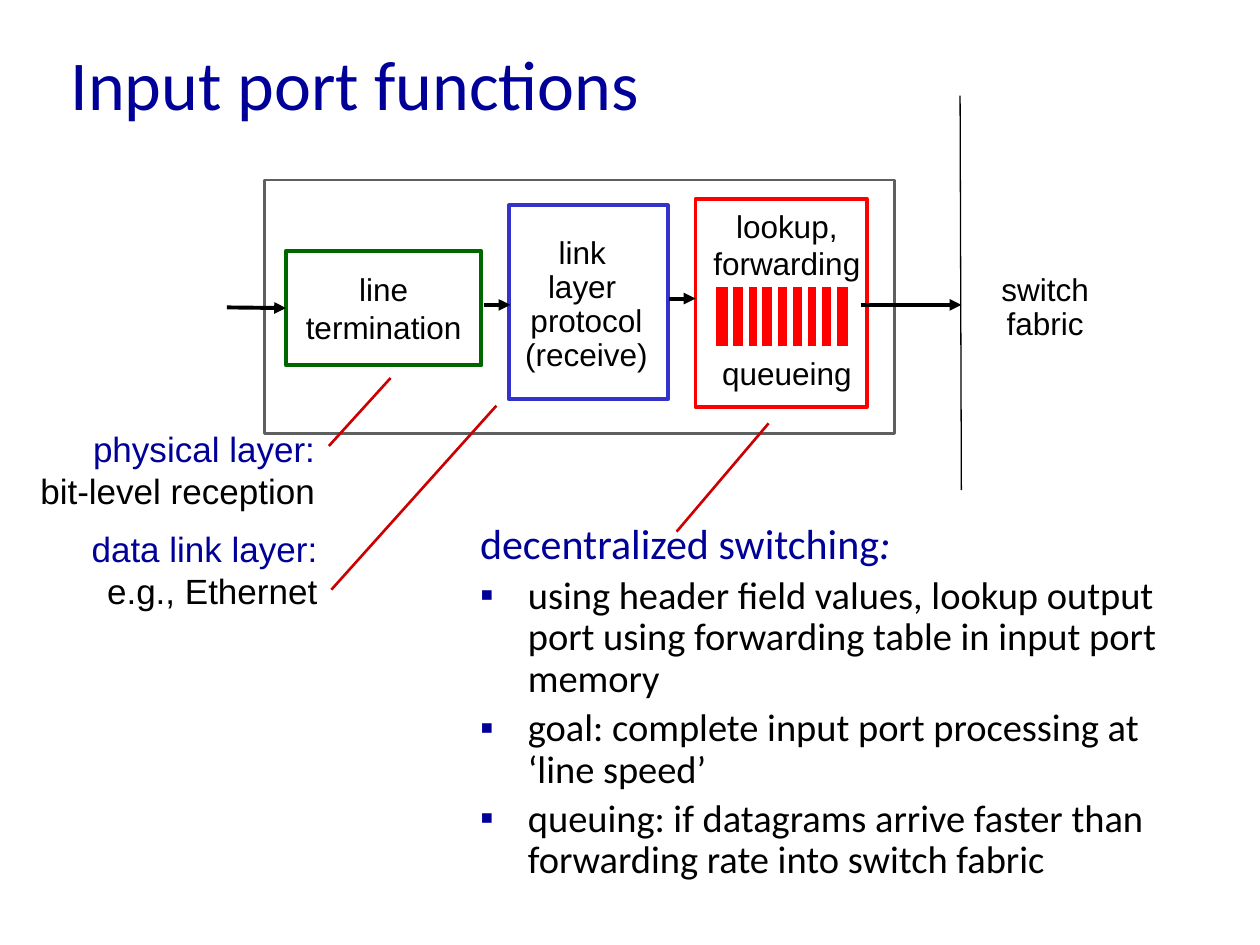
from dataclasses import dataclass
from typing import Optional

from lxml import etree
from pptx import Presentation
from pptx.dml.color import RGBColor
from pptx.enum.shapes import MSO_CONNECTOR, MSO_SHAPE
from pptx.enum.text import MSO_ANCHOR, MSO_AUTO_SIZE, PP_ALIGN
from pptx.oxml.ns import qn
from pptx.util import Emu, Pt

EMU_PER_PX = 9144
RECTANGLE = MSO_SHAPE.RECTANGLE
STRAIGHT = MSO_CONNECTOR.STRAIGHT
MIDDLE = MSO_ANCHOR.MIDDLE
NO_AUTOFIT = MSO_AUTO_SIZE.NONE
LEFT, CENTER, RIGHT = PP_ALIGN.LEFT, PP_ALIGN.CENTER, PP_ALIGN.RIGHT

BLACK = RGBColor(0x00, 0x00, 0x00)
WHITE = RGBColor(0xFF, 0xFF, 0xFF)
GRAY = RGBColor(0x5F, 0x5F, 0x5F)
NAVY = RGBColor(0x00, 0x00, 0x99)
BLUE = RGBColor(0x33, 0x33, 0xCC)
GREEN = RGBColor(0x00, 0x66, 0x00)
RED = RGBColor(0xFF, 0x00, 0x00)
DARK_RED = RGBColor(0xCC, 0x00, 0x00)


def px(value: int) -> Emu:
    return Emu(value * EMU_PER_PX)


@dataclass(frozen=True)
class TextLine:
    text: str
    size: int = 18
    color: RGBColor = BLACK
    font: str = "Arial"
    align: PP_ALIGN = CENTER
    spacing: Optional[float] = None
    before: Optional[int] = None


@dataclass(frozen=True)
class Box:
    left: int
    top: int
    width: int
    height: int
    outline: Optional[RGBColor] = None
    weight: float = 2.25
    lines: tuple[TextLine, ...] = ()
    fill: RGBColor = WHITE


@dataclass(frozen=True)
class Line:
    start: tuple[int, int]
    end: tuple[int, int]
    color: RGBColor = BLACK
    weight: float = 2.25
    arrow: bool = False


FRAME = Box(210, 143, 500, 201, GRAY, 1.5)
LINE_TERMINATION = Box(227, 199, 155, 91, GREEN,
                       lines=(TextLine("line"), TextLine("termination")))
LINK_LAYER = Box(404, 163, 126, 154, BLUE)
LOOKUP = Box(552, 158, 136, 165, RED)
LINK_LABEL = Box(408, 197, 115, 91, lines=tuple(
    TextLine(text, spacing=0.9) for text in ("link ", "layer ", "protocol", "(receive)")))
FABRIC_LABEL = Box(772, 199, 115, 91, lines=tuple(
    TextLine(text, spacing=0.9) for text in ("switch", "fabric")))
QUEUE = Box(566, 226, 109, 51, WHITE, 3, fill=RED)
SEPARATOR_COUNT = 8
FIRST_SEPARATOR, LAST_SEPARATOR = 580, 662

LABELS = (
    Box(556, 159, 137, 160, lines=(
        TextLine("lookup,"), TextLine("forwarding"), TextLine("queueing", before=41))),
    Box(22, 334, 238, 77, lines=(
        TextLine("physical layer:", 20, NAVY, align=RIGHT),
        TextLine("bit-level reception", 20, align=RIGHT))),
    Box(61, 414, 201, 77, lines=(
        TextLine("data link layer:", 20, NAVY, align=RIGHT),
        TextLine("e.g., Ethernet", 20, align=RIGHT))),
)
INPUT_ARROW = Line((180, 244), (227, 244), arrow=True)
ARROWS = (
    Line((384, 242), (405, 242), arrow=True),
    Line((531, 237), (552, 237), arrow=True),
    Line((683, 242), (763, 242), arrow=True),
)
FABRIC_EDGE = Line((762, 76), (763, 389), weight=0.75)
CALLOUTS = (
    Line((261, 354), (310, 300), DARK_RED, 1.5),
    Line((263, 468), (394, 322), DARK_RED, 1.5),
    Line((537, 422), (610, 336), DARK_RED, 1.5),
)
BULLETS = (
    "using header field values, lookup output port using forwarding table in input port memory",
    "goal: complete input port processing at ‘line speed’",
    "queuing: if datagrams arrive faster than forwarding rate into switch fabric",
)


def place(shape, left: int, top: int, width: int, height: int) -> None:
    shape.left, shape.top = px(left), px(top)
    shape.width, shape.height = px(width), px(height)


def set_bullet(paragraph, color: Optional[RGBColor]) -> None:
    properties = paragraph._p.get_or_add_pPr()
    properties.set("marL", str(px(38)))
    properties.set("indent", str(-px(38)))
    if color is None:
        etree.SubElement(properties, qn("a:buNone"))
        return
    bullet_color = etree.SubElement(properties, qn("a:buClr"))
    etree.SubElement(bullet_color, qn("a:srgbClr"), val=str(color))
    etree.SubElement(properties, qn("a:buFont"), typeface="Arial")
    etree.SubElement(properties, qn("a:buChar"), char="▪")


def format_paragraph(paragraph, line: TextLine) -> None:
    paragraph.text = line.text
    paragraph.alignment = line.align
    if line.spacing is not None:
        paragraph.line_spacing = line.spacing
    if line.before is not None:
        paragraph.space_before = Pt(line.before)
    font = paragraph.font
    font.name, font.size = line.font, Pt(line.size)
    font.color.rgb = line.color


def write_lines(frame, lines: tuple[TextLine, ...]) -> None:
    for index, line in enumerate(lines):
        paragraph = frame.add_paragraph() if index else frame.paragraphs[0]
        format_paragraph(paragraph, line)


def draw_box(shapes, box: Box):
    shape = shapes.add_shape(RECTANGLE, px(box.left), px(box.top), px(box.width), px(box.height))
    shape.shadow.inherit = False
    shape.fill.solid()
    shape.fill.fore_color.rgb = box.fill
    if box.outline is None:
        shape.line.fill.background()
    else:
        shape.line.color.rgb = box.outline
        shape.line.width = Pt(box.weight)
    if box.lines:
        shape.text_frame.word_wrap = False
        shape.text_frame.vertical_anchor = MIDDLE
        write_lines(shape.text_frame, box.lines)
    return shape


def draw_label(shapes, box: Box) -> None:
    label = shapes.add_textbox(px(box.left), px(box.top), px(box.width), px(box.height))
    label.text_frame.word_wrap = False
    write_lines(label.text_frame, box.lines)


def draw_line(shapes, line: Line):
    connector = shapes.add_connector(STRAIGHT, *map(px, line.start + line.end))
    connector.line.color.rgb = line.color
    connector.line.width = Pt(line.weight)
    if line.arrow:
        etree.SubElement(connector.line._get_or_add_ln(), qn("a:tailEnd"), type="triangle")
    etree.SubElement(connector._element.spPr, qn("a:effectLst"))
    return connector


def draw_queue(shapes) -> None:
    group = shapes.add_group_shape()
    draw_box(group.shapes, QUEUE)
    step = (LAST_SEPARATOR - FIRST_SEPARATOR) / (SEPARATOR_COUNT - 1)
    for index in range(SEPARATOR_COUNT):
        x = round(FIRST_SEPARATOR + index * step)
        draw_line(group.shapes, Line((x, QUEUE.top), (x, QUEUE.top + 50), WHITE, 3))


def fill_title(title) -> None:
    place(title, 46, 32, 850, 67)
    title.text_frame.auto_size = NO_AUTOFIT
    title.text_frame.vertical_anchor = MIDDLE
    write_lines(title.text_frame, (TextLine("Input port functions", 40, NAVY, "Calibri", LEFT),))


def fill_body(body) -> None:
    place(body, 371, 410, 597, 292)
    frame = body.text_frame
    frame.auto_size = NO_AUTOFIT
    heading = frame.paragraphs[0]
    set_bullet(heading, None)
    format_paragraph(heading, TextLine("decentralized switching", 24, NAVY, "Calibri", LEFT, 0.9))
    colon = heading.add_run()
    colon.text = ":"
    colon.font.italic = True
    for text in BULLETS:
        paragraph = frame.add_paragraph()
        set_bullet(paragraph, NAVY)
        format_paragraph(paragraph, TextLine(text, 22, BLACK, "Calibri", LEFT, 0.9))


def main() -> None:
    presentation = Presentation()
    presentation.slide_width, presentation.slide_height = px(1000), px(750)
    slide = presentation.slides.add_slide(presentation.slide_layouts[1])
    shapes = slide.shapes
    fill_title(shapes.title)
    fill_body(slide.placeholders[1])
    draw_box(shapes, FRAME)
    termination = draw_box(shapes, LINE_TERMINATION)
    for box in (LINK_LAYER, LOOKUP, LINK_LABEL, FABRIC_LABEL):
        draw_box(shapes, box)
    draw_line(shapes, INPUT_ARROW).end_connect(termination, 1)
    for label in LABELS:
        draw_label(shapes, label)
    draw_queue(shapes)
    for line in (*ARROWS, FABRIC_EDGE, *CALLOUTS):
        draw_line(shapes, line)
    presentation.save("out.pptx")


if __name__ == "__main__":
    main()
